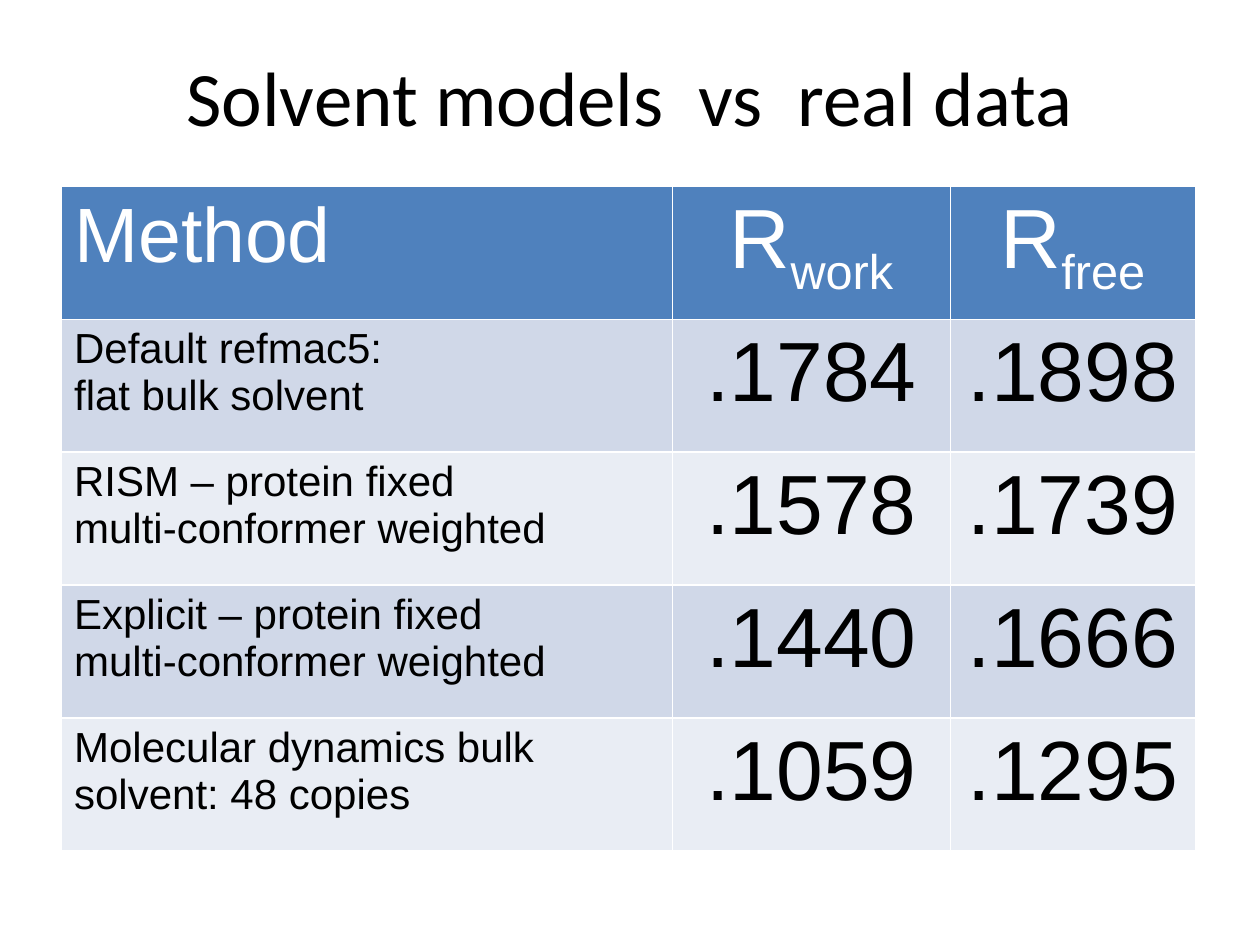
from dataclasses import dataclass

from pptx import Presentation
from pptx import util as u
from pptx.dml.color import RGBColor
from pptx.enum import text


@dataclass(frozen=True)
class Theme:
    """Colours, fonts and type sizes of the slide."""
    black: str = "000000"
    white: str = "FFFFFF"
    header: str = "4F81BD"
    bands: tuple = ("D0D8E8", "E9EDF4")
    title_font: str = "Calibri"
    table_font: str = "Arial"
    heading_size: int = 44
    value_size: int = 48
    method_size: int = 24


@dataclass(frozen=True)
class Box:
    """A region in centimetres."""
    left: float
    top: float
    width: float
    height: float

    def lengths(self):
        """Return the four sides as slide lengths."""
        return [u.Cm(side) for side in (self.left, self.top, self.width, self.height)]


THEME = Theme()
TITLE_BOX = Box(1.27, 0.33, 22.86, 3.18)
TABLE_BOX = Box(1.24, 3.76, 22.86, 13.39)
COLUMN_SHARES = (0.539, 0.245, 0.216)
RESULTS = [
    (("Default refmac5:", "flat bulk solvent"), ".1784", ".1898"),
    (("RISM – protein fixed", "multi-conformer weighted"), ".1578", ".1739"),
    (("Explicit – protein fixed", "multi-conformer weighted"), ".1440", ".1666"),
    (("Molecular dynamics bulk solvent: 48 copies",), ".1059", ".1295"),
]


def add_span(para, words, size, colour, font=THEME.table_font, baseline=None):
    """Add one formatted run to a paragraph."""
    span = para.add_run()
    span.text = words
    span.font.size = u.Pt(size)
    span.font.name = font
    span.font.bold = False
    span.font.color.rgb = RGBColor.from_string(colour)
    if baseline is not None:
        span.font._element.set("baseline", str(baseline * 1000))


def fill_cell(cell, colour):
    """Give a cell a solid fill and return its first paragraph."""
    cell.fill.solid()
    cell.fill.fore_color.rgb = RGBColor.from_string(colour)
    return cell.text_frame.paragraphs[0]


def add_title(page, box):
    """Place the centred title in its box."""
    frame = page.shapes.add_textbox(*box.lengths()).text_frame
    frame.word_wrap = True
    frame.vertical_anchor = text.MSO_ANCHOR.MIDDLE
    para = frame.paragraphs[0]
    para.alignment = text.PP_ALIGN.CENTER
    add_span(para, "Solvent models  vs  real data", THEME.heading_size, THEME.black, THEME.title_font)


def fill_header(cells):
    """Write the method heading and the two R-factor headings."""
    method, *factors = cells
    add_span(fill_cell(method, THEME.header), "Method", THEME.heading_size, THEME.white)
    for cell, subscript in zip(factors, ("work", "free")):
        para = fill_cell(cell, THEME.header)
        para.alignment = text.PP_ALIGN.CENTER
        add_span(para, "R", THEME.value_size, THEME.white)
        add_span(para, subscript, THEME.value_size, THEME.white, baseline=-25)


def fill_result(cells, result, colour):
    """Write one method with its R values."""
    method, *factors = cells
    lines, *values = result
    para = fill_cell(method, colour)
    for index, line in enumerate(lines):
        if index:
            para = method.text_frame.add_paragraph()
        add_span(para, line, THEME.method_size, THEME.black)
    for cell, value in zip(factors, values):
        para = fill_cell(cell, colour)
        para.alignment = text.PP_ALIGN.CENTER
        add_span(para, value, THEME.value_size, THEME.black)


def add_results_table(page, box):
    """Place the table of solvent models in its box."""
    row_count = len(RESULTS) + 1
    table = page.shapes.add_table(row_count, len(COLUMN_SHARES), *box.lengths()).table
    for column, share in zip(table.columns, COLUMN_SHARES):
        column.width = u.Cm(box.width * share)
    header, *rows = table.rows
    for row in table.rows:
        row.height = u.Cm(box.height / row_count)
    fill_header(header.cells)
    for index, (row, result) in enumerate(zip(rows, RESULTS)):
        fill_result(row.cells, result, THEME.bands[index % 2])


def main():
    """Build and save the deck."""
    deck = Presentation()
    deck.slide_width, deck.slide_height = u.Cm(25.4), u.Cm(19.05)
    page = deck.slides.add_slide(deck.slide_layouts[6])
    add_title(page, TITLE_BOX)
    add_results_table(page, TABLE_BOX)
    deck.save("out.pptx")


if __name__ == "__main__":
    main()
